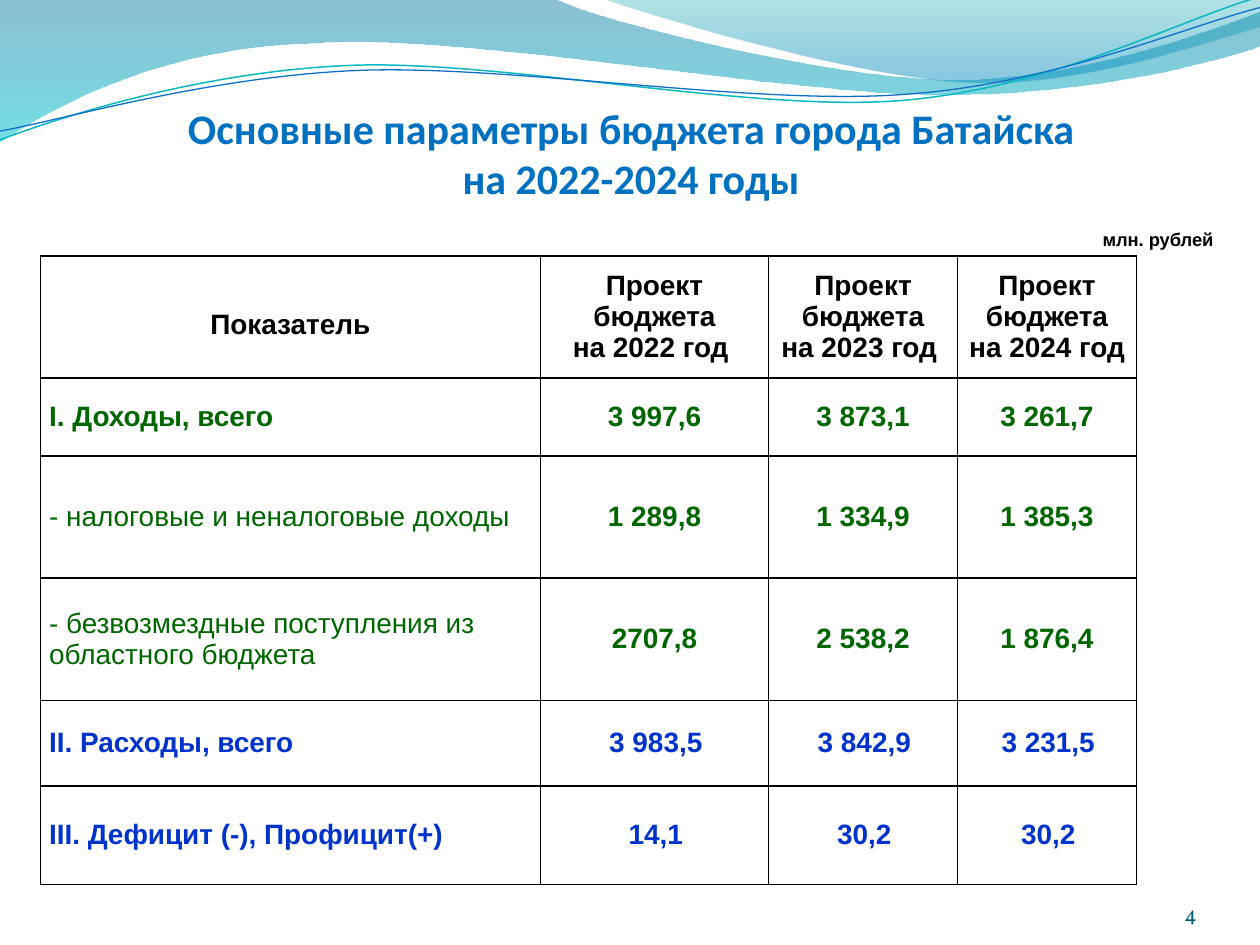
from lxml import etree
from pptx import Presentation
from pptx.dml.color import RGBColor
from pptx.enum.text import MSO_ANCHOR, PP_ALIGN
from pptx.oxml.ns import qn
from pptx.util import Inches, Pt

LEFT, CENTER, RIGHT = PP_ALIGN.LEFT, PP_ALIGN.CENTER, PP_ALIGN.RIGHT
TOP, MIDDLE, BOTTOM = MSO_ANCHOR.TOP, MSO_ANCHOR.MIDDLE, MSO_ANCHOR.BOTTOM
BLACK, GREEN, BLUE = "000000", "006600", "0033CC"


def add_text(paragraph, text, size, font, color, bold, align):
    paragraph.alignment = align
    for index, line in enumerate(text.split("\n")):
        if index:
            paragraph.add_line_break()
        run = paragraph.add_run()
        run.text = line
        run.font.size = Pt(size)
        run.font.name = font
        run.font.bold = bold
        run.font.color.rgb = RGBColor.from_string(color)


def add_wave(start, pieces, closed):
    """Draw pieces of 2 numbers (line end) or 6 (two Bezier controls and end)."""
    points = [(Inches(piece[i]), Inches(piece[i + 1]))
              for piece in pieces for i in range(0, len(piece), 2)]
    builder = slide.shapes.build_freeform(Inches(start[0]), Inches(start[1]))
    builder.add_line_segments(points, close=closed)
    wave = builder.convert_to_shape()
    wave.shadow.inherit = False
    # Each run of three segments that stands for a Bezier piece becomes one curve
    segments = iter(list(wave._element.spPr.iter(qn("a:lnTo"))))
    for piece in pieces:
        segment = next(segments)
        if len(piece) == 6:
            segment.addprevious(curve := etree.Element(qn("a:cubicBezTo")))
            for part in (segment, next(segments), next(segments)):
                curve.append(part[0])
                part.getparent().remove(part)
    return wave


prs = Presentation()
prs.slide_width, prs.slide_height = Inches(10), Inches(7.5)
slide = prs.slides.add_slide(prs.slide_layouts[6])

# Header waves: start, pieces, gradient stops (position, colour, opacity in %)
bands = [
    ((0, 0), [(4.4, -0.01), (4.76, 0.17, 6.64, 0.63, 7.58, 0.63),
              (8.53, 0.63, 9.58, 0.26, 10, 0.09), (10.01, 0.36),
              (9.83, 0.44, 8.7, 0.76, 7.46, 0.75), (6.22, 0.75, 3.82, 0.28, 2.57, 0.34),
              (1.29, 0.36, 0.46, 0.83, -0.01, 1.13), (0, 0)],
     [(0, "0074A1", 45), (1, "00C6CF", 55)]),
    ((4.79, -0.01), [(5.09, 0.11, 6.82, 0.62, 7.69, 0.65),
                     (8.56, 0.69, 9.61, 0.32, 10, 0.21), (10, 0), (4.79, -0.01)],
     [(0, "00A1A9", 30), (0.8, "008BBF", 45)]),
]
for start, pieces, stops in bands:
    band = add_wave(start, pieces, True)
    band.line.fill.background()
    band.fill.gradient()
    band.fill.gradient_angle = 270
    for stop, (position, color, _) in zip(band.fill.gradient_stops, stops):
        stop.position = position
        stop.color.rgb = RGBColor.from_string(color)
    for color_element, (_, _, opacity) in zip(band._element.spPr.iter(qn("a:srgbClr")), stops):
        etree.SubElement(color_element, qn("a:alpha"), val=str(opacity * 1000))

strands = [
    ((0, 1.11), [(0.48, 0.93, 1.58, 0.57, 2.77, 0.52), (3.95, 0.47, 5.93, 0.89, 7.13, 0.8),
                 (8.33, 0.71, 9.38, 0.15, 9.98, -0.02)], "0AB8BF", 0.85),
    ((0, 1.04), [(0.47, 0.96, 1.64, 0.61, 2.83, 0.56), (4.03, 0.51, 5.97, 0.84, 7.17, 0.75),
                 (8.36, 0.67, 9.41, 0.21, 10, 0.06)], "0F6FC6", 0.75),
]
for start, pieces, color, width in strands:
    strand = add_wave(start, pieces, False)
    strand.fill.background()
    strand.line.color.rgb = RGBColor.from_string(color)
    strand.line.width = Pt(width)

# Title, unit of measure and page number
labels = [
    ((0.51, 0.74, 9, 0.87), (0, 0.05, 0, 0), BOTTOM,
     ("Основные параметры бюджета города Батайска\nна 2022-2024 годы",
      24, "Calibri", "0070C0", True, CENTER)),
    ((8.31, 1.76, 1.42, 0.28), (0.1, 0.05, 0.1, 0.05), TOP,
     ("млн. рублей", 10.5, "Arial", BLACK, True, RIGHT)),
    ((8.67, 6.95, 0.83, 0.4), (0, 0, 0, 0), BOTTOM,
     ("4", 12, "Vollkorn", "045D75", False, RIGHT)),
]
for place, insets, anchor, text in labels:
    frame = slide.shapes.add_textbox(*map(Inches, place)).text_frame
    frame.word_wrap = True
    frame.vertical_anchor = anchor
    (frame.margin_left, frame.margin_top,
     frame.margin_right, frame.margin_bottom) = map(Inches, insets)
    add_text(frame.paragraphs[0], *text)

# Budget table: colour, bold indicator, first-line indent of the values, cells
years = [f"Проект бюджета\nна {year} год " for year in (2022, 2023, 2024)]
budget = [
    (BLACK, True, 0, ["Показатель", *years]),
    (GREEN, True, -0.07, ["I. Доходы, всего", "3 997,6", "3 873,1", "3 261,7"]),
    (GREEN, False, -0.07, ["- налоговые и неналоговые доходы", "1 289,8", "1 334,9", "1 385,3"]),
    (GREEN, False, -0.07, ["- безвозмездные поступления из областного бюджета",
                           "2707,8", "2 538,2", "1 876,4"]),
    (BLUE, True, 0.02, ["II. Расходы, всего", "3 983,5", "3 842,9", "3 231,5"]),
    (BLUE, True, 0.02, ["III. Дефицит (-), Профицит(+)", "14,1", "30,2", "30,2"]),
]
column_widths = [3.97, 1.81, 1.5, 1.42]
row_heights = [0.97, 0.62, 0.97, 0.97, 0.68, 0.78]
table = slide.shapes.add_table(len(budget), len(column_widths), Inches(0.32), Inches(2.03),
                               Inches(sum(column_widths)), Inches(sum(row_heights))).table
table.first_row = table.horz_banding = False
for column, width in zip(table.columns, column_widths):
    column.width = Inches(width)
for row, height in zip(table.rows, row_heights):
    row.height = Inches(height)

for r, (color, bold_indicator, indent, texts) in enumerate(budget):
    for c, text in enumerate(texts):
        cell = table.cell(r, c)
        cell.vertical_anchor = MIDDLE
        cell.margin_left = cell.margin_right = Inches(0.07)
        cell.margin_top = cell.margin_bottom = 0
        for side in ("a:lnL", "a:lnR", "a:lnT", "a:lnB"):
            border = etree.SubElement(cell._tc.get_or_add_tcPr(), qn(side), w=str(Pt(1)))
            border_fill = etree.SubElement(border, qn("a:solidFill"))
            etree.SubElement(border_fill, qn("a:srgbClr"), val=BLACK)
        cell.fill.background()
        for index, line in enumerate(text.split("\n")):
            frame = cell.text_frame
            paragraph = frame.add_paragraph() if index else frame.paragraphs[0]
            add_text(paragraph, line, 16, "Arial", color, bold_indicator or c > 0,
                     LEFT if r and not c else CENTER)
            if c and indent:
                paragraph._p.get_or_add_pPr().set("indent", str(Inches(indent)))

heading = table.cell(0, 0).text_frame.paragraphs[0]
heading.line_spacing = 1.5
heading._p.get_or_add_pPr().set("indent", str(Inches(-0.07)))

prs.save("out.pptx")
